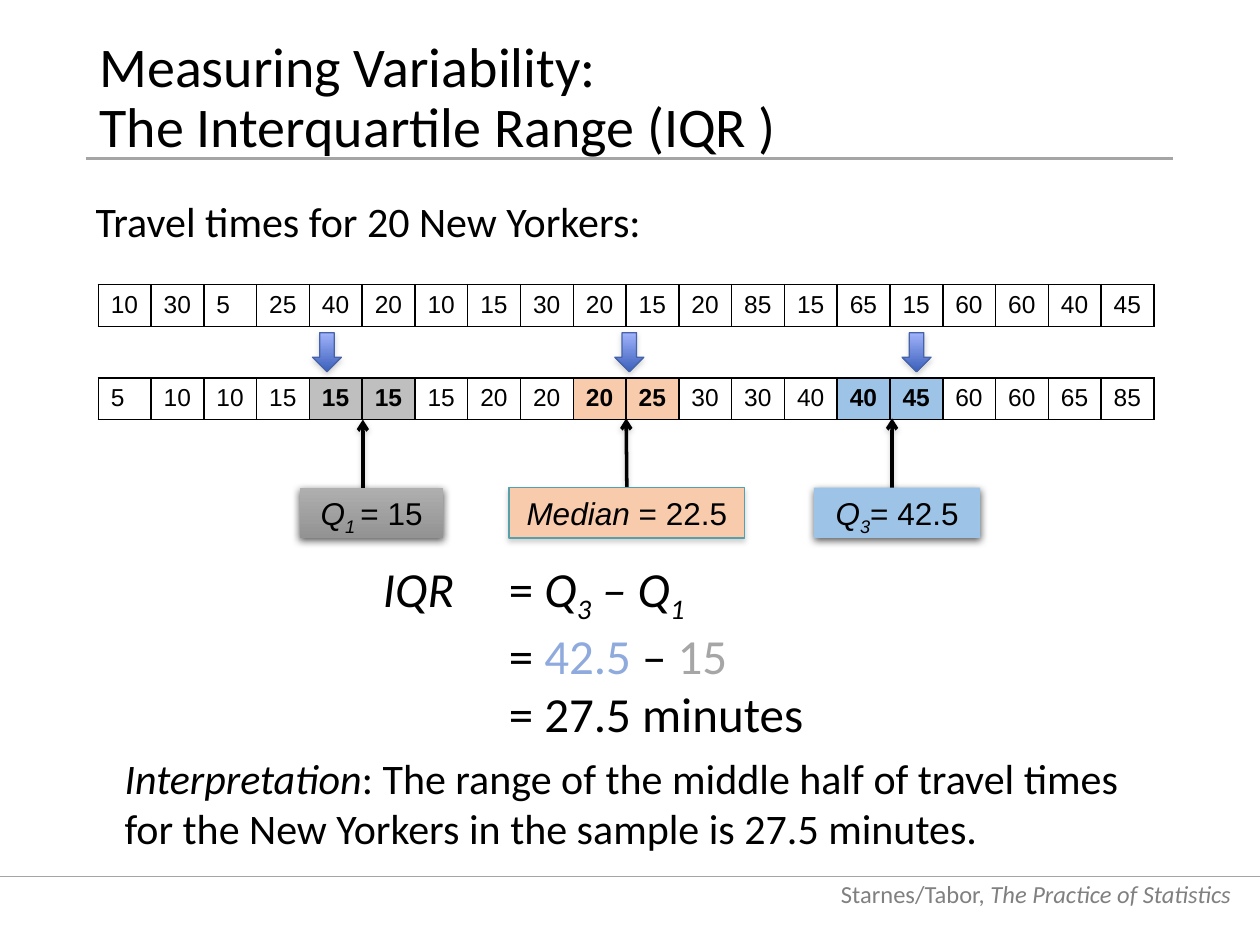
from lxml import etree
from pptx import Presentation
from pptx.dml.color import RGBColor
from pptx.enum.shapes import MSO_CONNECTOR, MSO_SHAPE
from pptx.enum.text import MSO_ANCHOR, MSO_AUTO_SIZE, PP_ALIGN
from pptx.oxml import parse_xml
from pptx.oxml.ns import nsdecls, qn
from pptx.util import Inches, Pt

STRAIGHT = MSO_CONNECTOR.STRAIGHT
RECTANGLE, DOWN_ARROW = MSO_SHAPE.RECTANGLE, MSO_SHAPE.DOWN_ARROW
TOP, MIDDLE, BOTTOM = MSO_ANCHOR.TOP, MSO_ANCHOR.MIDDLE, MSO_ANCHOR.BOTTOM
LEFT, CENTER, RIGHT = PP_ALIGN.LEFT, PP_ALIGN.CENTER, PP_ALIGN.RIGHT
FIT_SHAPE, NO_FIT = MSO_AUTO_SIZE.SHAPE_TO_FIT_TEXT, MSO_AUTO_SIZE.NONE

COLORS = {
    "black": "000000", "white": "FFFFFF", "footer": "808080", "rule": "A5A5A5",
    "q1_cell": "BFBFBF", "median": "F8CBAD", "q3": "9DC3E6",
    "median_line": "56A0AC", "arrow_top": "A1B3FB", "arrow_bottom": "3B60BB",
    "arrow_line": "4663AA", "q1_top": "AFAFAF", "q1_bottom": "939393",
    "q3_text": "8FAADC", "q1_text": "A6A6A6",
}
ITALIC = {"italic": True}
SUBSCRIPT = {"italic": True, "subscript": True}
LINE_SHADOW = ("footer", 38, 3.1, 1.6)
SOFT_SHADOW = ("footer", 35, 3.1, 1.8)
DEEP_SHADOW = ("black", 63, 4.5, 1.5)


def rgb(name):
    return RGBColor.from_string(COLORS[name])


class SlideBuilder:
    body_font = "Calibri"
    data_font = "Arial"

    def __init__(self, slide):
        self.slide = slide
        self.shapes = slide.shapes

    def add_runs(self, paragraph, pieces, size, font, align=LEFT):
        paragraph.alignment = align
        for text, style in pieces:
            if text == "\v":
                paragraph.add_line_break()
                continue
            run = paragraph.add_run()
            run.text = text
            run.font.name, run.font.size = font, Pt(size)
            run.font.italic = style.get("italic", False)
            run.font.bold = style.get("bold", False)
            run.font.color.rgb = rgb(style.get("color", "black"))
            if style.get("subscript"):
                run._r.get_or_add_rPr().set("baseline", "-25000")

    def text(self, box, paragraphs, size, align=LEFT, anchor=TOP, wrap=True,
             fit=FIT_SHAPE, spacing=None, after=0, tab=None):
        shape = self.shapes.add_textbox(*map(Inches, box))
        frame = shape.text_frame
        frame.word_wrap, frame.auto_size, frame.vertical_anchor = wrap, fit, anchor
        for index, pieces in enumerate(paragraphs):
            paragraph = frame.add_paragraph() if index else frame.paragraphs[0]
            if tab:
                tabs = etree.SubElement(paragraph._p.get_or_add_pPr(), qn("a:tabLst"))
                etree.SubElement(tabs, qn("a:tab"), pos=str(Inches(tab)), algn="l")
            if spacing:
                paragraph.line_spacing = spacing
            if after:
                paragraph.space_after = Pt(after)
            self.add_runs(paragraph, pieces, size, self.body_font, align)

    def shadow(self, shape, color, alpha, blur, distance):
        properties = shape._element.spPr
        for old in properties.findall(qn("a:effectLst")):
            properties.remove(old)
        properties.append(parse_xml(
            f'<a:effectLst {nsdecls("a")}><a:outerShdw blurRad="{Pt(blur)}" '
            f'dist="{Pt(distance)}" dir="5400000" rotWithShape="0">'
            f'<a:srgbClr val="{COLORS[color]}"><a:alpha val="{alpha * 1000}"/>'
            '</a:srgbClr></a:outerShdw></a:effectLst>'))

    def line(self, start, end, color, width):
        line = self.shapes.add_connector(STRAIGHT, *map(Inches, (*start, *end)))
        line.line.color.rgb = rgb(color)
        line.line.width = Pt(width)
        etree.SubElement(line._element.spPr, qn("a:effectLst"))
        return line

    def pointer(self, x, bottom, top):
        line = self.line((x, bottom), (x, top), "black", 2)
        outline = line._element.spPr.find(qn("a:ln"))
        etree.SubElement(outline, qn("a:tailEnd"), type="arrow")
        self.shadow(line, *LINE_SHADOW)
        return line

    def shape(self, kind, box, fills, outline, shadow):
        shape = self.shapes.add_shape(kind, *map(Inches, box))
        shape.shadow.inherit = False
        if len(fills) == 1:
            shape.fill.solid()
            shape.fill.fore_color.rgb = rgb(fills[0])
        else:
            shape.fill.gradient()
            shape.fill.gradient_angle = 270
            for stop, color in zip(shape.fill.gradient_stops, fills):
                stop.color.rgb = rgb(color)
        if outline:
            shape.line.color.rgb = rgb(outline)
            shape.line.width = Pt(0.75)
        else:
            shape.line.fill.background()
        self.shadow(shape, *shadow)
        return shape

    def label(self, left, width, pieces, fills, outline, shadow):
        shape = self.shape(RECTANGLE, (left, 3.87, width, 0.4), fills, outline, shadow)
        frame = shape.text_frame
        frame.word_wrap, frame.auto_size, frame.vertical_anchor = False, FIT_SHAPE, TOP
        self.add_runs(frame.paragraphs[0], pieces, 18, self.data_font, CENTER)
        return shape

    def number_row(self, top, values, background=None, highlights=None):
        highlights = highlights or {}
        frame = self.shapes.add_table(1, len(values), Inches(0.78), Inches(top),
                                      Inches(8.38), Inches(0.33))
        table = frame.table
        table.first_row = table.horz_banding = False
        for index, value in enumerate(values):
            cell = table.cell(0, index)
            cell.margin_right = Inches(0.05)
            fill = highlights.get(index, background)
            if fill:
                cell.fill.solid()
                cell.fill.fore_color.rgb = rgb(fill)
            else:
                cell.fill.background()
            style = {"bold": index in highlights}
            self.add_runs(cell.text_frame.paragraphs[0], [(str(value), style)],
                          14, self.data_font)
            properties = cell._tc.get_or_add_tcPr()
            for position, side in enumerate(("lnL", "lnR", "lnT", "lnB")):
                properties.insert(position, parse_xml(
                    f'<a:{side} {nsdecls("a")} w="{Pt(1)}"><a:solidFill>'
                    f'<a:srgbClr val="{COLORS["black"]}"/></a:solidFill></a:{side}>'))


def main():
    presentation = Presentation()
    presentation.slide_width, presentation.slide_height = Inches(10), Inches(7.5)
    builder = SlideBuilder(presentation.slides.add_slide(presentation.slide_layouts[6]))

    gray = {"color": "footer"}
    builder.text((6.47, 6.86, 3.4, 0.4),
                 [[("Starnes/Tabor,", gray),
                   (" The Practice of Statistics", {**gray, **ITALIC})]],
                 14, RIGHT, BOTTOM, fit=NO_FIT)
    builder.line((0, 6.96), (10, 6.96), "rule", 0.5)
    builder.line((0.68, 1.26), (9.31, 1.26), "rule", 1.5)
    builder.text((0.69, 0.4, 8.62, 0.78),
                 [[("Measuring Variability: ", {}), ("\v", {}),
                   ("The Interquartile Range (IQR )", {})]],
                 32, anchor=MIDDLE, fit=NO_FIT, spacing=0.9)

    times = [10, 30, 5, 25, 40, 20, 10, 15, 30, 20,
             15, 20, 85, 15, 65, 15, 60, 60, 40, 45]
    quartile_cells = {4: "q1_cell", 5: "q1_cell", 9: "median", 10: "median",
                      14: "q3", 15: "q3"}
    builder.number_row(3, sorted(times), highlights=quartile_cells)
    builder.number_row(2.26, times, background="white")

    for left in (2.48, 4.88, 7.16):
        builder.shape(DOWN_ARROW, (left, 2.64, 0.23, 0.31),
                      ("arrow_top", "arrow_bottom"), "arrow_line", SOFT_SHADOW)

    median_pointer = builder.pointer(4.97, 3.87, 3.32)
    builder.pointer(7.08, 3.91, 3.32)
    builder.pointer(2.88, 3.92, 3.33)
    median_label = builder.label(4.04, 1.87, [("Median ", ITALIC), ("= 22.5", {})],
                                 ("median",), "median_line", SOFT_SHADOW)
    median_pointer.begin_connect(median_label, 0)
    builder.label(6.46, 1.32, [("Q", ITALIC), ("3", SUBSCRIPT), ("= 42.5", {})],
                  ("q3",), None, DEEP_SHADOW)
    builder.label(2.38, 1.14, [("Q", ITALIC), ("1 ", SUBSCRIPT), ("= 15", {})],
                  ("q1_top", "q1_bottom"), None, DEEP_SHADOW)

    builder.text((2.94, 4.38, 3.61, 1.51), [
        [("IQR", ITALIC), ("\t= ", {}), ("Q", ITALIC), ("3", SUBSCRIPT),
         (" – Q", ITALIC), ("1", SUBSCRIPT)],
        [("\t= ", {}), ("42.5 ", {"color": "q3_text"}), ("– ", {}),
         ("15", {"color": "q1_text"})],
        [("\t= 27.5 minutes", {})],
    ], 28, wrap=False, tab=1)
    builder.text((0.89, 5.92, 8.42, 0.91),
                 [[("Interpretation", ITALIC),
                   (": The range of the middle half of travel times for the "
                    "New Yorkers in the sample is 27.5 minutes.", {})]], 24, after=6)
    builder.text((0.66, 1.5, 8.42, 0.5),
                 [[("Travel times for 20 New Yorkers:", {})]], 24, after=6)
    presentation.save("out.pptx")


if __name__ == "__main__":
    main()
